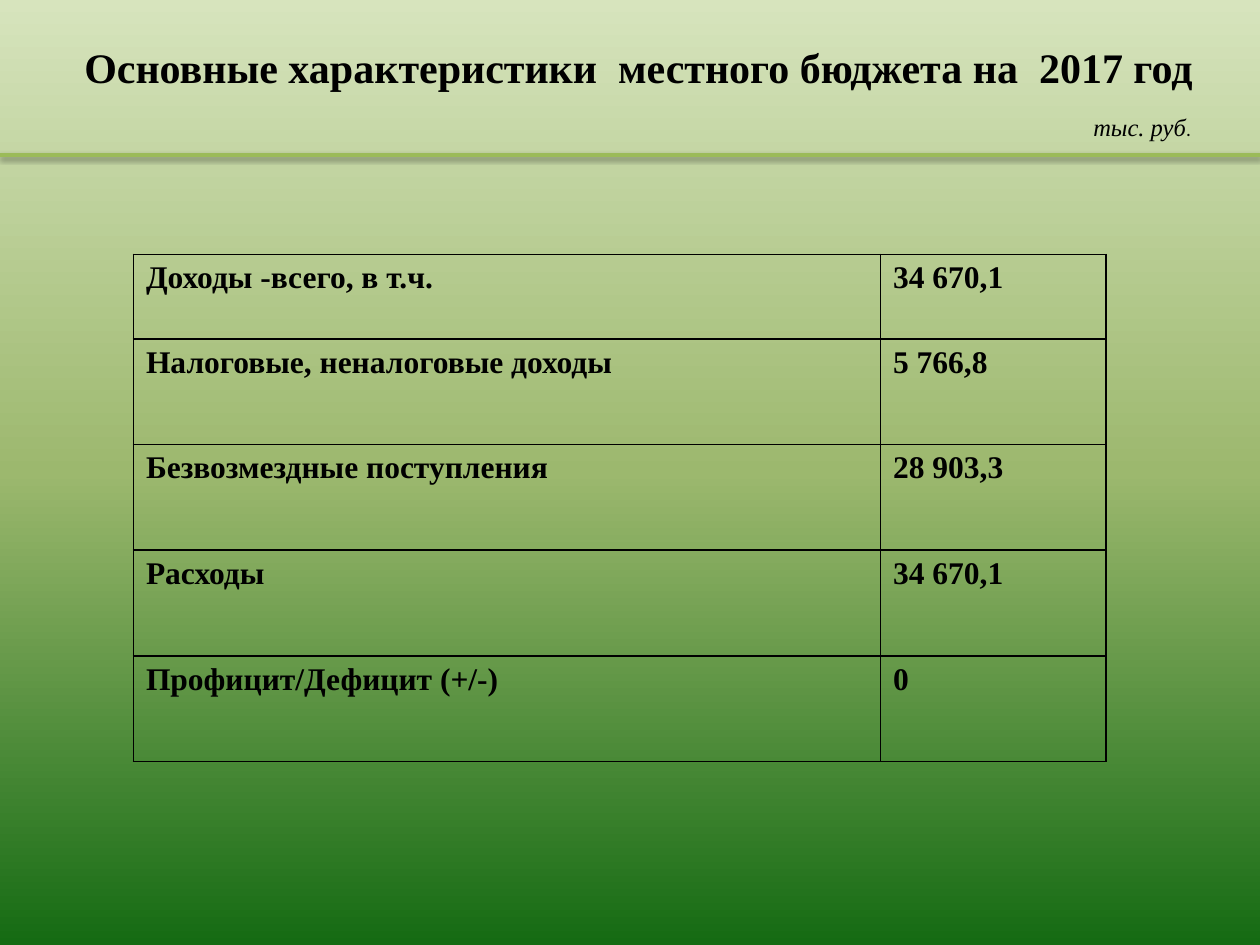
from copy import deepcopy
from dataclasses import dataclass

from pptx import Presentation
from pptx.dml.color import RGBColor
from pptx.enum.shapes import MSO_CONNECTOR
from pptx.enum.text import MSO_ANCHOR, MSO_AUTO_SIZE, PP_ALIGN
from pptx.oxml import parse_xml
from pptx.oxml.ns import nsdecls, qn
from pptx.util import Cm, Pt

STRAIGHT = MSO_CONNECTOR.STRAIGHT
TOP = MSO_ANCHOR.TOP
FIT_SHAPE = MSO_AUTO_SIZE.SHAPE_TO_FIT_TEXT
NO_FIT = MSO_AUTO_SIZE.NONE
LEFT, CENTER = PP_ALIGN.LEFT, PP_ALIGN.CENTER


@dataclass(frozen=True)
class Theme:
    text: str = "000000"
    border: str = "000000"
    rule: str = "9BBB59"
    background: tuple = ((0, "D7E4BD"), (0.5, "9CB86E"), (1, "156B13"))
    font: str = "Times New Roman"
    small_font: str = "Calibri"
    title_size: int = 24
    table_size: int = 18
    unit_size: int = 14
    dot_size: int = 11


class SlideBuilder:
    def __init__(self, slide, theme):
        self.s = slide
        self.theme = theme

    def background(self):
        fill = self.s.background.fill
        fill.gradient()
        fill.gradient_angle = 270  # counter-clockwise: top to bottom
        stops = self.s.element.find(".//" + qn("a:gsLst"))
        stops.insert(1, deepcopy(stops[0]))
        for stop, (position, color) in zip(fill.gradient_stops, self.theme.background):
            stop.position = position
            stop.color.rgb = RGBColor.from_string(color)

    def run(self, p, text, size, font=None, bold=False, italic=False):
        r = p.add_run()
        r.text = text
        r.font.name = font or self.theme.font
        r.font.size = Pt(size)
        r.font.bold = bold
        r.font.italic = italic
        r.font.color.rgb = RGBColor.from_string(self.theme.text)

    def text_box(self, x, y, w, h, align=LEFT, wrap=True, auto_size=NO_FIT):
        """Add an empty text box and return its paragraph."""
        sp = self.s.shapes.add_textbox(Cm(x), Cm(y), Cm(w), Cm(h))
        tf = sp.text_frame
        tf.word_wrap = wrap
        tf.auto_size = auto_size
        tf.vertical_anchor = TOP
        p = tf.paragraphs[0]
        p.alignment = align
        return p

    def rule(self, x1, x2, y):
        line = self.s.shapes.add_connector(STRAIGHT, Cm(x1), Cm(y), Cm(x2), Cm(y))
        line.line.color.rgb = RGBColor.from_string(self.theme.rule)
        line.line.width = Pt(2)
        line.element.spPr.append(parse_xml(
            f'<a:effectLst {nsdecls("a")}>'
            f'<a:outerShdw blurRad="{Pt(3.1)}" dist="{Pt(1.6)}" dir="5400000" rotWithShape="0">'
            '<a:srgbClr val="000000"><a:alpha val="38000"/></a:srgbClr>'
            '</a:outerShdw></a:effectLst>'))

    def cell_borders(self, cell):
        tc_pr = cell._tc.get_or_add_tcPr()
        for i, side in enumerate(("lnL", "lnR", "lnT", "lnB")):
            tc_pr.insert(i, parse_xml(
                f'<a:{side} {nsdecls("a")} w="{Pt(1)}"><a:solidFill>'
                f'<a:srgbClr val="{self.theme.border}"/></a:solidFill></a:{side}>'))

    def table(self, x, y, widths, heights, rows):
        table = self.s.shapes.add_table(
            len(rows), len(widths), Cm(x), Cm(y), Cm(sum(widths)), Cm(sum(heights))).table
        for column, width in zip(table.columns, widths):
            column.width = Cm(width)
        for row, height, values in zip(table.rows, heights, rows):
            row.height = Cm(height)
            for cell, value in zip(row.cells, values):
                cell.fill.background()
                self.cell_borders(cell)
                self.run(cell.text_frame.paragraphs[0], value,
                         self.theme.table_size, bold=True)


BUDGET = [
    ("Доходы -всего, в т.ч.", "34 670,1"),
    ("Налоговые, неналоговые доходы", "5 766,8"),
    ("Безвозмездные поступления", "28 903,3"),
    ("Расходы", "34 670,1"),
    ("Профицит/Дефицит (+/-)", "0"),
]


def main():
    prs = Presentation()
    prs.slide_width, prs.slide_height = Cm(25.4), Cm(19.05)
    theme = Theme()
    b = SlideBuilder(prs.slides.add_slide(prs.slide_layouts[6]), theme)
    b.background()

    # Header rule and title
    b.rule(25.4, 0, 3.12)
    p = b.text_box(1.37, 0.71, 23.22, 2.03, CENTER, wrap=False, auto_size=FIT_SHAPE)
    b.run(p, "Основные характеристики  местного бюджета на  2017 год ",
          theme.title_size, bold=True)

    # Budget table
    b.table(2.69, 5.13, [15.06, 4.55], [1.7] + [2.13] * 4, BUDGET)

    # Unit of measure
    p = b.text_box(21.79, 2.13, 3.61, 0.99)
    b.run(p, "тыс. руб", theme.unit_size, italic=True)
    b.run(p, ".", theme.dot_size, font=theme.small_font)

    prs.save("out.pptx")


if __name__ == "__main__":
    main()
